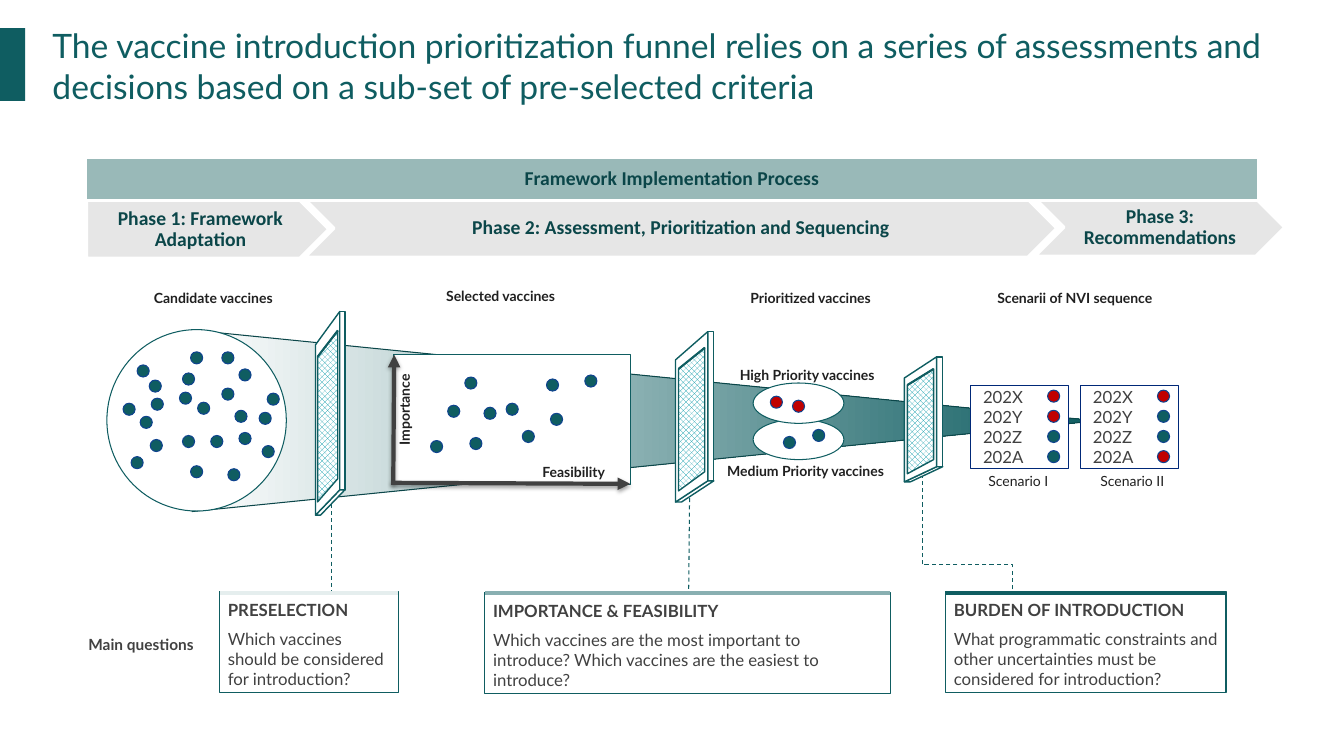
"""Build the vaccine introduction prioritization funnel slide."""
from lxml.etree import SubElement
from pptx import Presentation
from pptx.dml.color import RGBColor
from pptx.enum.dml import MSO_LINE, MSO_PATTERN
from pptx.enum.shapes import MSO_CONNECTOR, MSO_SHAPE
from pptx.enum.text import MSO_ANCHOR, MSO_AUTO_SIZE, PP_ALIGN
from pptx.oxml.ns import qn
from pptx.util import Inches, Pt

TEAL = RGBColor(0x0F, 0x5D, 0x61)
DARK_TEAL = RGBColor(0x0B, 0x46, 0x49)
MID_TEAL = RGBColor(0x89, 0xAF, 0xB1)
PALE_TEAL = RGBColor(0xE5, 0xEE, 0xEE)
BAND = RGBColor(0x99, 0xB9, 0xB8)
MESH = RGBColor(0x00, 0x97, 0xA7)
BLUE = RGBColor(0x0F, 0x43, 0x8F)
NAVY = RGBColor(0x00, 0x28, 0x78)
RED = RGBColor(0xC0, 0x00, 0x00)
WHITE = RGBColor(0xFF, 0xFF, 0xFF)
LIGHT_GREY = RGBColor(0xE6, 0xE6, 0xE6)
GREY = RGBColor(0x41, 0x41, 0x41)
BLACK = RGBColor(0x20, 0x20, 0x20)


def paint(sp, fill=None, line=None, weight=0.75):
    if fill is not None:
        sp.fill.solid()
        sp.fill.fore_color.rgb = fill
    if line is None:
        sp.line.fill.background()
    else:
        sp.line.color.rgb = line
        sp.line.width = Pt(weight)
    return SubElement(sp._element.spPr, qn("a:effectLst"))


def write(sp, lines, size, color, bold=False, align=PP_ALIGN.CENTER, font="Lato",
          anchor=MSO_ANCHOR.MIDDLE, insets=(0.1, 0.05, 0.1, 0.05), spacing=None):
    tf = sp.text_frame
    tf.word_wrap = True
    tf.auto_size = MSO_AUTO_SIZE.NONE
    tf.vertical_anchor = anchor
    tf.margin_left, tf.margin_top, tf.margin_right, tf.margin_bottom = map(Inches, insets)
    tf.text = "\n".join(lines)
    for p in tf.paragraphs:
        p.alignment = align
        p.line_spacing = spacing
        for r in p.runs:
            r.font.name = font
            r.font.size = Pt(size)
            r.font.bold = bold
            r.font.color.rgb = color
    return tf


prs = Presentation()
prs.slide_width, prs.slide_height = Inches(13.33), Inches(7.5)
s = prs.slides.add_slide(prs.slide_layouts[5])
shapes = s.shapes

title = shapes.title
title.left, title.top, title.width, title.height = map(Inches, (0.52, 0.25, 12.55, 0.8))
write(title, ["The vaccine introduction prioritization funnel relies on a series of assessments "
              "and decisions based on a sub-set of pre-selected criteria"],
      24, TEAL, align=PP_ALIGN.LEFT, anchor=MSO_ANCHOR.TOP, insets=(0, 0, 0, 0))
accent = shapes.add_shape(MSO_SHAPE.RECTANGLE, Inches(-0.01), Inches(0.28), Inches(0.26), Inches(0.72))
paint(accent, TEAL)

funnel = shapes.add_shape(MSO_SHAPE.ISOSCELES_TRIANGLE, Inches(5.49), Inches(-0.31), Inches(1.8), Inches(8.97))
funnel.rotation = 90
funnel.fill.gradient()
funnel.fill.gradient_angle = 0
for stop, color in zip(funnel.fill.gradient_stops, (WHITE, TEAL)):
    stop.color.rgb = color
funnel._element.spPr.find(qn("a:gradFill")).set("rotWithShape", "0")
paint(funnel, line=DARK_TEAL)

for kind, x1, y1, x2, y2 in (
        (MSO_CONNECTOR.ELBOW, 9.01, 5.71, 10.18, 4.81),
        (MSO_CONNECTOR.STRAIGHT, 3.29, 4.64, 3.29, 6.22),
        (MSO_CONNECTOR.STRAIGHT, 6.84, 4.87, 6.83, 5.93)):
    link = shapes.add_connector(kind, Inches(x1), Inches(y1), Inches(x2), Inches(y2))
    paint(link, line=TEAL)
    link.line.dash_style = MSO_LINE.DASH
    if kind == MSO_CONNECTOR.ELBOW:
        link._element.spPr.find(qn("a:xfrm")).set("rot", "16200000")
        SubElement(link._element.spPr.find(qn("a:prstGeom")).find(qn("a:avLst")),
                   qn("a:gd"), name="adj1", fmla="val 20500")

for left, right, edge, gap, frame, mesh in (
        (3.13, 3.37, 0.05, 0.02, (3.09, 4.86, 5.11, 3.42), (3.28, 4.75, 4.98, 3.54)),
        (6.7, 7.02, 0.06, 0.03, (3.29, 4.77, 4.98, 3.57), (3.45, 4.68, 4.87, 3.66)),
        (8.97, 9.29, 0.06, 0.03, (3.54, 4.63, 4.78, 3.75), (3.66, 4.56, 4.7, 3.82))):
    top, bottom, front_bottom, front_top = frame
    inner_left, inner_right = left + gap, right - gap
    side = [(right, top), (right + edge, top), (right + edge, bottom), (right, bottom)]
    base = [(right, bottom), (left, front_bottom), (left + edge, front_bottom), (right + edge, bottom)]
    face = list(zip((right, right, left, left), frame))
    net = list(zip((inner_right, inner_right, inner_left, inner_left), mesh))
    for outline in (side, base, face, net):
        points = [(Inches(x), Inches(y)) for x, y in outline]
        fb = shapes.build_freeform(*points[0])
        fb.add_line_segments(points[1:], close=True)
        panel = fb.convert_to_shape()
        paint(panel, WHITE, TEAL, 1)
        if outline is net:
            panel.fill.patterned()
            panel.fill.pattern = MSO_PATTERN.OUTLINED_DIAMOND
            panel.fill.fore_color.rgb = MESH
            panel.fill.back_color.rgb = WHITE
    for start, end, weight in ((net[2], net[3], 1), (net[3], net[0], 1.5)):
        rim = shapes.add_connector(MSO_CONNECTOR.STRAIGHT, *map(Inches, start + end))
        paint(rim, line=TEAL, weight=weight)

for kind, x, y, w, h in (
        (MSO_SHAPE.OVAL, 1.06, 3.27, 1.78, 1.8),
        (MSO_SHAPE.RECTANGLE, 3.9, 3.52, 2.35, 1.29),
        (MSO_SHAPE.OVAL, 7.47, 4.16, 0.9, 0.4),
        (MSO_SHAPE.OVAL, 7.47, 3.8, 0.9, 0.4)):
    area = shapes.add_shape(kind, Inches(x), Inches(y), Inches(w), Inches(h))
    paint(area, WHITE, TEAL)

for x1, y1, x2, y2 in ((3.9, 4.8, 3.91, 3.52), (3.88, 4.79, 6.25, 4.8)):
    axis = shapes.add_connector(MSO_CONNECTOR.STRAIGHT, Inches(x1), Inches(y1), Inches(x2), Inches(y2))
    effects = paint(axis, line=GREY, weight=3)
    SubElement(axis._element.spPr.find(qn("a:ln")), qn("a:tailEnd"), type="triangle")
    shadow = SubElement(effects, qn("a:outerShdw"), blurRad=str(int(Pt(3.1))), dist=str(int(Pt(1.6))),
                        dir="5400000", rotWithShape="0")
    SubElement(SubElement(shadow, qn("a:srgbClr"), val="000000"), qn("a:alpha"), val="38000")

candidates = [(2.26, 4.65), (1.36, 3.62), (2.2, 3.49), (2.33, 4.07), (1.5, 3.95), (1.22, 4),
              (1.89, 4.62), (2.57, 4.09), (1.49, 4.36), (2.37, 4.29), (1.89, 3.49), (2.2, 3.85),
              (2.37, 3.66), (2.65, 3.9), (1.96, 3.99), (1.39, 4.13), (2.09, 4.32), (1.81, 3.7),
              (2.6, 4.42), (1.48, 3.77), (1.81, 4.32), (1.3, 4.53), (1.78, 3.89)]
selected = [(4.61, 3.74), (4.27, 4.37), (4.66, 4.34), (5.46, 4.1), (5.8, 3.72), (5.42, 3.76),
            (4.44, 4.02), (4.8, 4.04), (5.18, 4.27), (5.02, 4)]
medium = [(7.77, 4.33), (8.06, 4.26)]
high = [(7.86, 3.97), (7.64, 3.93)]
dots = [(x, y, TEAL) for x, y in candidates + selected + medium] + [(x, y, RED) for x, y in high]

for x, colors in ((9.63, (RED, RED, TEAL, TEAL)), (10.72, (RED, TEAL, TEAL, RED))):
    scenario = shapes.add_shape(MSO_SHAPE.RECTANGLE, Inches(x), Inches(3.82), Inches(0.97), Inches(0.83))
    paint(scenario, WHITE, NAVY)
    write(scenario, ["202X", "202Y", "202Z", "202A"], 12, GREY, align=PP_ALIGN.LEFT, insets=(0.12, 0, 0, 0))
    dots += [(x + 0.76, 3.87 + 0.2 * i, color) for i, color in enumerate(colors)]

for x, y, color in dots:
    dot = shapes.add_shape(MSO_SHAPE.OVAL, Inches(x), Inches(y), Inches(0.12), Inches(0.12))
    paint(dot, color, BLUE)

for text, x, y, w, h, size, color, bold, angle in (
        ("Candidate vaccines", 0.91, 2.8, 2.41, 0.32, 10, BLACK, True, 0),
        ("Selected vaccines", 3.76, 2.78, 2.41, 0.32, 10, BLACK, True, 0),
        ("Prioritized vaccines", 6.96, 2.8, 2.16, 0.32, 10, BLACK, True, 0),
        ("Scenarii of NVI sequence", 9.58, 2.8, 2.16, 0.32, 10, BLACK, True, 0),
        ("High Priority vaccines", 6.8, 3.56, 2.41, 0.32, 10, BLACK, True, 0),
        ("Medium Priority vaccines", 6.91, 4.51, 2.16, 0.32, 10, BLACK, True, 0),
        ("Importance", 3.51, 3.97, 1, 0.19, 10, BLACK, True, 270),
        ("Feasibility", 5.19, 4.59, 1, 0.19, 10, BLACK, True, 0),
        ("Scenario I", 9.64, 4.61, 0.92, 0.32, 10, BLACK, False, 0),
        ("Scenario II", 10.77, 4.61, 0.92, 0.32, 10, BLACK, False, 0),
        ("Main questions", 0.8, 6.3, 1.2, 0.19, 11, GREY, True, 0)):
    label = shapes.add_textbox(Inches(x), Inches(y), Inches(w), Inches(h))
    label.rotation = angle
    write(label, [text], size, color, bold, insets=(0, 0, 0, 0))

for x, y, w, color, heading, question in (
        (4.81, 5.88, 4.02, MID_TEAL, "IMPORTANCE & FEASIBILITY",
         "Which vaccines are the most important to introduce? Which vaccines are the easiest to introduce?"),
        (9.38, 5.87, 2.78, TEAL, "BURDEN OF INTRODUCTION",
         "What programmatic constraints and other uncertainties must be considered for introduction?"),
        (2.18, 5.87, 1.77, PALE_TEAL, "PRESELECTION",
         "Which vaccines should be considered for introduction?")):
    box = shapes.add_shape(MSO_SHAPE.RECTANGLE, Inches(x), Inches(y), Inches(w), Inches(1))
    paint(box, WHITE, TEAL)
    tf = write(box, [heading, question], 12, GREY, align=PP_ALIGN.LEFT,
               anchor=MSO_ANCHOR.TOP, insets=(0.08,) * 4)
    tf.paragraphs[0].runs[0].font.bold = True
    for p in tf.paragraphs:
        p.space_before = Pt(6)
    cap = shapes.add_connector(MSO_CONNECTOR.STRAIGHT, Inches(x), Inches(5.88), Inches(x + w), Inches(5.88))
    paint(cap, line=color, weight=3)

for kind, x, y, w, h, fill, inset, text in (
        (MSO_SHAPE.PENTAGON, 0.86, 1.99, 2.4, 0.57, LIGHT_GREY, 0, "Phase 1: Framework Adaptation"),
        (MSO_SHAPE.CHEVRON, 3.03, 1.98, 7.45, 0.57, LIGHT_GREY, 0.3,
         "Phase 2: Assessment, Prioritization and Sequencing"),
        (MSO_SHAPE.CHEVRON, 10.27, 1.97, 2.47, 0.57, LIGHT_GREY, 0, "Phase 3: Recommendations"),
        (MSO_SHAPE.RECTANGLE, 0.85, 1.56, 11.63, 0.43, BAND, 0.3, "Framework Implementation Process")):
    phase = shapes.add_shape(kind, Inches(x), Inches(y), Inches(w), Inches(h))
    paint(phase, fill, WHITE, 2)
    write(phase, [text], 14, DARK_TEAL, True, font="Calibri", insets=(inset, 0.03, inset, 0.03), spacing=0.9)

prs.save("out.pptx")
